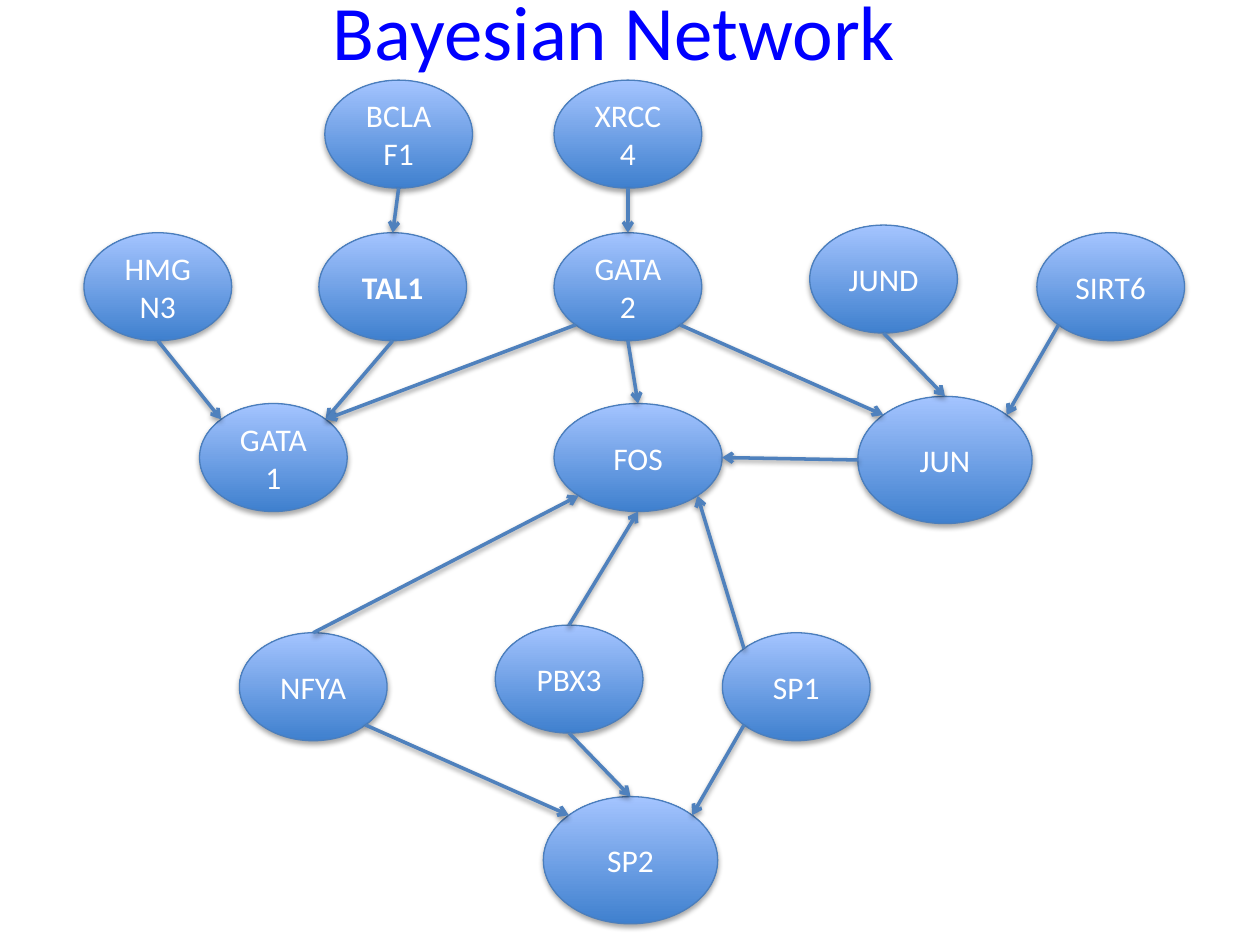
import math

import pptx
import pptx.dml.color
import pptx.enum.shapes
import pptx.enum.text
import pptx.oxml
import pptx.oxml.ns
import pptx.util

Pt = pptx.util.Pt
RGBColor = pptx.dml.color.RGBColor

TITLE_BLUE = RGBColor(0x00, 0x00, 0xFF)
NODE_DARK = RGBColor(0x3F, 0x80, 0xCE)
NODE_LIGHT = RGBColor(0xA4, 0xC4, 0xFF)
NODE_EDGE = RGBColor(0x4B, 0x7E, 0xBC)
ARROW_BLUE = RGBColor(0x4F, 0x81, 0xBD)
WHITE = RGBColor(0xFF, 0xFF, 0xFF)

NORMAL = (84.4, 61.7)
WIDE = (96, 61.7)
LARGE = (99.6, 72.7)

# Gene: (left, top, size)
GENES = {
    "HMGN3": (48, 133, NORMAL),
    "GATA1": (114, 230.6, NORMAL),
    "TAL1": (182.2, 133, NORMAL),
    "GATA2": (316.6, 133, NORMAL),
    "XRCC4": (316.6, 45.8, NORMAL),
    "FOS": (316.6, 230.6, WIDE),
    "JUN": (490.2, 226.5, LARGE),
    "BCLAF1": (185.6, 45.8, NORMAL),
    "SIRT6": (592.5, 133, NORMAL),
    "JUND": (462.7, 128.6, NORMAL),
    "NFYA": (136.8, 361.6, NORMAL),
    "SP2": (310.5, 455.2, LARGE),
    "SP1": (412.8, 361.6, NORMAL),
    "PBX3": (283, 357.2, NORMAL),
}

# Compass points of an ellipse, in degrees clockwise from the right
COMPASS = {"E": 0, "SE": 45, "S": 90, "SW": 135, "W": 180, "NW": 225, "N": 270, "NE": 315}

# (parent, side it leaves, child, side it reaches)
EDGES = [
    ("HMGN3", "S", "GATA1", "NW"),
    ("XRCC4", "S", "GATA2", "N"),
    ("TAL1", "S", "GATA1", "NE"),
    ("GATA2", "S", "FOS", "N"),
    ("GATA2", "SW", "GATA1", "NE"),
    ("BCLAF1", "S", "TAL1", "N"),
    ("GATA2", "SE", "JUN", "NW"),
    ("JUND", "S", "JUN", "N"),
    ("SIRT6", "SW", "JUN", "NE"),
    ("JUN", "W", "FOS", "E"),
    ("NFYA", "SE", "SP2", "NW"),
    ("PBX3", "S", "SP2", "N"),
    ("SP1", "SW", "SP2", "NE"),
    ("PBX3", "N", "FOS", "S"),
    ("NFYA", "N", "FOS", "SW"),
    ("SP1", "NW", "FOS", "SE"),
]


def write(frame, text, size, color, bold=False, font="Calibri"):
    """Put one centred paragraph in the middle of a text frame."""
    frame.word_wrap = True
    frame.vertical_anchor = pptx.enum.text.MSO_ANCHOR.MIDDLE
    para = frame.paragraphs[0]
    para.alignment = pptx.enum.text.PP_ALIGN.CENTER
    span = para.add_run()
    span.text = text
    span.font.name = font
    span.font.size = Pt(size)
    span.font.bold = bold
    span.font.color.rgb = color


def rim_point(gene, side):
    """Return the point on a gene's ellipse at a compass side."""
    left, top, (width, height) = GENES[gene]
    angle = math.radians(COMPASS[side])
    return (left + width / 2 * (1 + math.cos(angle)),
            top + height / 2 * (1 + math.sin(angle)))


class NetworkSlide:
    def __init__(self, page):
        self.page = page

    def title(self, text):
        box = self.page.shapes.add_textbox(Pt(27), Pt(-28), Pt(648), Pt(90))
        write(box.text_frame, text, size=44, color=TITLE_BLUE)

    def node(self, text, left, top, size, bold=False):
        width, height = size
        node = self.page.shapes.add_shape(
            pptx.enum.shapes.MSO_SHAPE.OVAL, Pt(left), Pt(top), Pt(width), Pt(height))
        node.fill.gradient()
        node.fill.gradient_angle = 90
        for stop, color in zip(node.fill.gradient_stops, (NODE_DARK, NODE_LIGHT)):
            stop.color.rgb = color
        node.line.color.rgb = NODE_EDGE
        node.line.width = Pt(0.75)
        node.shadow.inherit = False
        effects = node._element.spPr.find(pptx.oxml.ns.qn("a:effectLst"))
        self.shadow(effects, distance=1.8, opacity=35)
        write(node.text_frame, text, size=18, color=WHITE, bold=bold)

    def arrow(self, start, end):
        arrow = self.page.shapes.add_connector(
            pptx.enum.shapes.MSO_CONNECTOR.STRAIGHT, *map(Pt, start + end))
        arrow.line.color.rgb = ARROW_BLUE
        arrow.line.width = Pt(2)
        properties = arrow._element.spPr
        head = pptx.oxml.parse_xml(
            f'<a:tailEnd {pptx.oxml.ns.nsdecls("a")} type="arrow"/>')
        properties.find(pptx.oxml.ns.qn("a:ln")).append(head)
        effects = pptx.oxml.parse_xml(f'<a:effectLst {pptx.oxml.ns.nsdecls("a")}/>')
        properties.append(effects)
        self.shadow(effects, distance=1.6, opacity=38)

    def shadow(self, effects, distance, opacity):
        """Add a soft black shadow that falls straight down."""
        effects.append(pptx.oxml.parse_xml(
            f'<a:outerShdw {pptx.oxml.ns.nsdecls("a")} blurRad="{Pt(3.1)}"'
            f' dist="{Pt(distance)}" dir="5400000" rotWithShape="0">'
            f'<a:srgbClr val="000000"><a:alpha val="{opacity * 1000}"/></a:srgbClr>'
            '</a:outerShdw>'))


def main():
    deck = pptx.Presentation()
    deck.slide_width, deck.slide_height = Pt(720), Pt(540)
    slide = NetworkSlide(deck.slides.add_slide(deck.slide_layouts[6]))
    slide.title("Bayesian Network")
    for gene, (left, top, size) in GENES.items():
        slide.node(gene, left, top, size, bold=gene == "TAL1")
    for parent, leaving, child, reaching in EDGES:
        slide.arrow(rim_point(parent, leaving), rim_point(child, reaching))
    deck.save("out.pptx")


if __name__ == "__main__":
    main()
